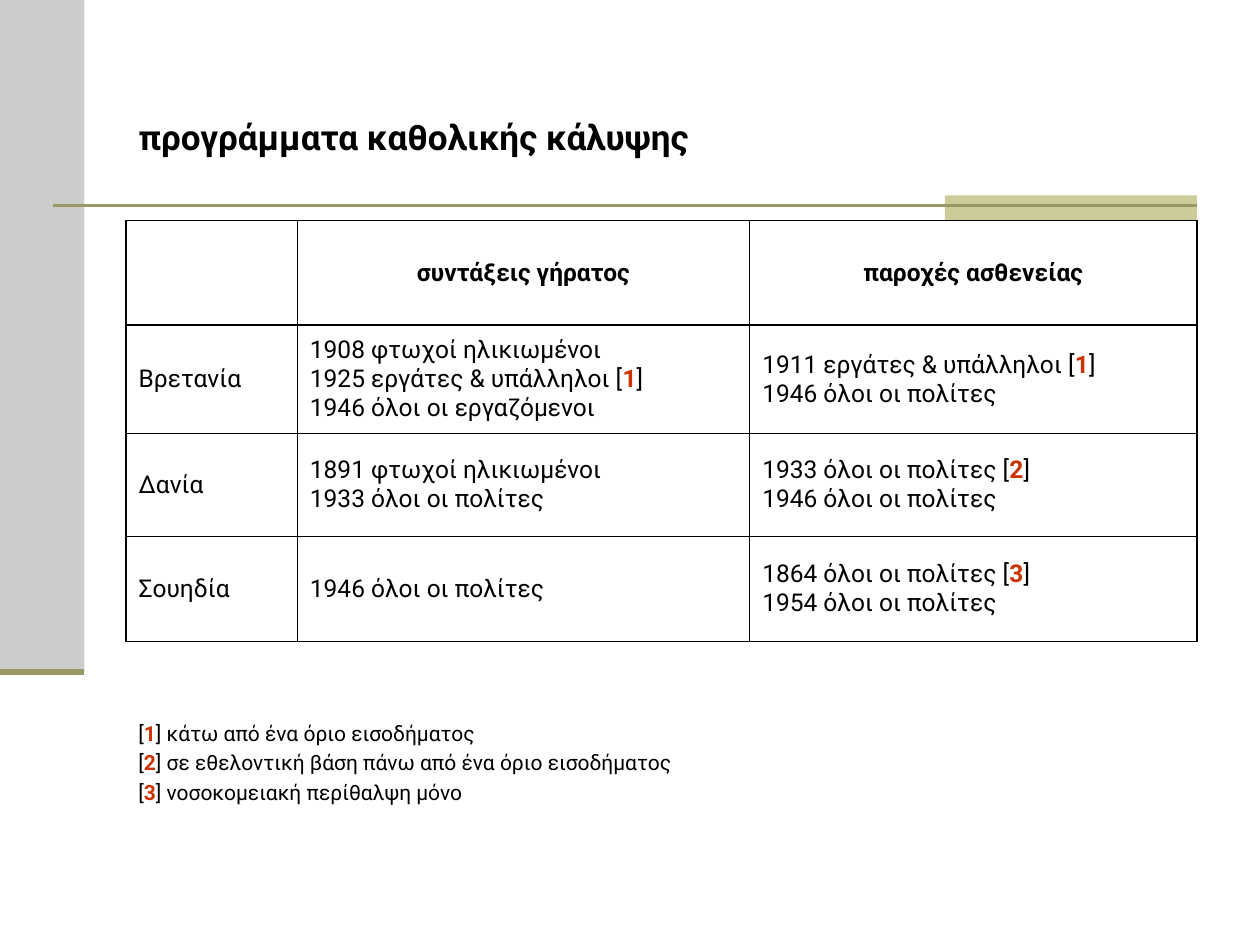
from dataclasses import dataclass

from lxml.etree import SubElement
from pptx import Presentation
from pptx.dml.color import RGBColor
from pptx.enum.shapes import MSO_CONNECTOR, MSO_SHAPE
from pptx.enum.text import MSO_ANCHOR, PP_ALIGN
from pptx.oxml.ns import qn
from pptx.slide import Slide
from pptx.table import _Cell
from pptx.util import Inches, Pt


@dataclass(frozen=True)
class Theme:
    font: str = "Roboto"
    text: str = "000000"
    mark: str = "CC3300"
    panel: str = "CCCCCC"
    accent: str = "CCCC99"
    rule: str = "999966"
    title_size: float = 20
    table_size: float = 14
    note_size: float = 12
    border_width: float = 1


@dataclass(frozen=True)
class Block:
    left: float
    top: float
    width: float
    height: float
    color: str


@dataclass(frozen=True)
class Rule:
    left: float
    right: float
    y: float
    weight: float


THEME = Theme()
BLOCKS = [
    Block(0, 0, 0.67, 5.33, THEME.panel),
    Block(7.5, 1.55, 2, 0.2, THEME.accent),
]
RULES = [Rule(0.42, 9.5, 1.63, 1.5), Rule(0, 0.67, 5.33, 3.5)]
TITLE = "προγράμματα καθολικής κάλυψης"
COLUMN_WIDTHS = [1.36, 3.59, 3.55]
ROW_HEIGHTS = [0.83, 0.86, 0.82, 0.83]
ROWS = [
    ["", "συντάξεις γήρατος", "παροχές ασθενείας"],
    [
        "Βρετανία",
        "1908 φτωχοί ηλικιωμένοι\n1925 εργάτες & υπάλληλοι [1]\n1946 όλοι οι εργαζόμενοι",
        "1911 εργάτες & υπάλληλοι [1]\n1946 όλοι οι πολίτες",
    ],
    [
        "Δανία",
        "1891 φτωχοί ηλικιωμένοι\n1933 όλοι οι πολίτες",
        "1933 όλοι οι πολίτες [2]\n1946 όλοι οι πολίτες",
    ],
    [
        "Σουηδία",
        "1946 όλοι οι πολίτες",
        "1864 όλοι οι πολίτες [3]\n1954 όλοι οι πολίτες",
    ],
]
NOTES = """[1] κάτω από ένα όριο εισοδήματος
[2] σε εθελοντική βάση πάνω από ένα όριο εισοδήματος
[3] νοσοκομειακή περίθαλψη μόνο"""


def write_text(frame, text: str, size: float, bold: bool = False) -> None:
    """Fill a text frame, setting the digit in square brackets in the mark style."""
    frame.text = text
    for para in frame.paragraphs:
        line = para.text
        if "[" in line:
            digit = line.index("[") + 1
            para.text = line[:digit]
            para.add_run().text = line[digit]
            para.add_run().text = line[digit + 1:]
        for index, span in enumerate(para.runs):
            is_mark = index == 1
            span.font.name = THEME.font
            span.font.size = Pt(size)
            span.font.bold = bold or is_mark
            span.font.color.rgb = RGBColor.from_string(THEME.mark if is_mark else THEME.text)


def draw_block(page: Slide, block: Block) -> None:
    """Draw a plain filled rectangle."""
    shape = page.shapes.add_shape(
        MSO_SHAPE.RECTANGLE,
        Inches(block.left), Inches(block.top), Inches(block.width), Inches(block.height),
    )
    shape.shadow.inherit = False
    shape.fill.solid()
    shape.fill.fore_color.rgb = RGBColor.from_string(block.color)
    shape.line.fill.background()


def draw_rule(page: Slide, rule: Rule) -> None:
    """Draw a horizontal line without a shadow."""
    line = page.shapes.add_connector(
        MSO_CONNECTOR.STRAIGHT,
        Inches(rule.left), Inches(rule.y), Inches(rule.right), Inches(rule.y),
    )
    line.line.color.rgb = RGBColor.from_string(THEME.rule)
    line.line.width = Pt(rule.weight)
    SubElement(line._element.spPr, qn("a:effectLst"))


def frame_cell(cell: _Cell) -> None:
    """Give a cell a solid border on all sides and no fill."""
    properties = cell._tc.get_or_add_tcPr()
    for side in ("lnL", "lnR", "lnT", "lnB"):
        border = SubElement(properties, qn(f"a:{side}"), w=str(Pt(THEME.border_width)))
        fill = SubElement(border, qn("a:solidFill"))
        SubElement(fill, qn("a:srgbClr"), val=THEME.text)
    cell.fill.background()


def draw_title(page: Slide) -> None:
    """Place and format the title placeholder."""
    title = page.shapes.title
    title.left, title.top = Inches(1), Inches(0.61)
    title.width, title.height = Inches(8.5), Inches(0.95)
    write_text(title.text_frame, TITLE, THEME.title_size, bold=True)
    title.text_frame.vertical_anchor = MSO_ANCHOR.MIDDLE
    title.text_frame.paragraphs[0].alignment = PP_ALIGN.LEFT


def draw_table(page: Slide) -> None:
    """Draw the table of programmes by country."""
    table = page.shapes.add_table(
        len(ROWS), len(COLUMN_WIDTHS), Inches(1), Inches(1.75),
        Inches(sum(COLUMN_WIDTHS)), Inches(sum(ROW_HEIGHTS)),
    ).table
    table.first_row = table.horz_banding = False
    for column, width in zip(table.columns, COLUMN_WIDTHS):
        column.width = Inches(width)
    for row_index, (row, height, texts) in enumerate(zip(table.rows, ROW_HEIGHTS, ROWS)):
        row.height = Inches(height)
        is_header = row_index == 0
        for cell, text in zip(row.cells, texts):
            write_text(cell.text_frame, text, THEME.table_size, bold=is_header)
            cell.vertical_anchor = MSO_ANCHOR.MIDDLE
            frame_cell(cell)
            for para in cell.text_frame.paragraphs:
                para.alignment = PP_ALIGN.CENTER if is_header else PP_ALIGN.LEFT


def draw_notes(page: Slide) -> None:
    """Draw the numbered notes below the table."""
    box = page.shapes.add_textbox(Inches(0.5), Inches(5.67), Inches(8.94), Inches(1))
    box.text_frame.word_wrap = True
    write_text(box.text_frame, NOTES, THEME.note_size)
    for para in box.text_frame.paragraphs:
        para.level = 1
        para.space_before = Pt(0.2 * THEME.note_size)
        properties = para._p.get_or_add_pPr()
        properties.set("marL", str(Inches(0.81)))
        properties.set("indent", str(Inches(-0.31)))


def main() -> None:
    """Build the slide and save the deck."""
    deck = Presentation()
    deck.slide_width, deck.slide_height = Inches(10), Inches(7.5)
    page = deck.slides.add_slide(deck.slide_layouts.get_by_name("Title Only"))
    for block in BLOCKS:
        draw_block(page, block)
    for rule in RULES:
        draw_rule(page, rule)
    draw_title(page)
    draw_table(page)
    draw_notes(page)
    deck.save("out.pptx")


if __name__ == "__main__":
    main()
